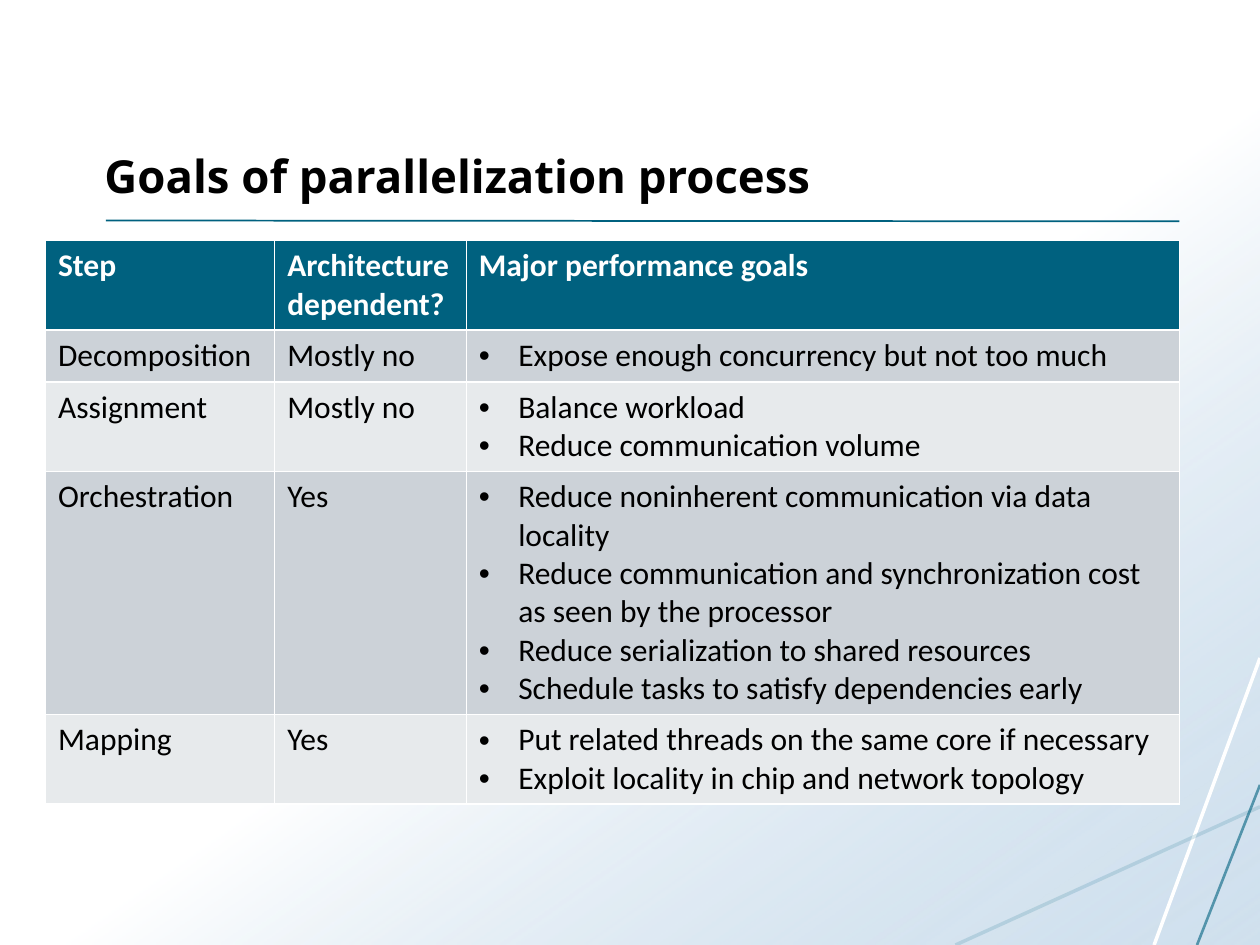
from lxml import etree
from pptx import Presentation
from pptx.dml.color import RGBColor
from pptx.enum import shapes, text
from pptx.oxml.ns import qn
from pptx.util import Pt

TEAL = "00617F"
WHITE = "FFFFFF"
BLACK = "000000"
BANDS = ("CCD2D8", "E7EAEC")
COLUMN_WIDTHS = (131, 109.5, 407.5)
ROW_HEIGHTS = (51, 29.5, 51, 139, 51)
HEADINGS = ("Step", "Architecture dependent?", "Major performance goals")
STEPS = (
    ("Decomposition", "Mostly no", ("Expose enough concurrency but not too much",)),
    ("Assignment", "Mostly no", ("Balance workload", "Reduce communication volume")),
    ("Orchestration", "Yes", (
        "Reduce noninherent communication via data locality",
        "Reduce communication and synchronization cost as seen by the processor",
        "Reduce serialization to shared resources",
        "Schedule tasks to satisfy dependencies early")),
    ("Mapping", "Yes", (
        "Put related threads on the same core if necessary",
        "Exploit locality in chip and network topology")),
)
RAYS = (
    ((720, 376), (659.5, 540), WHITE, 2, 100),
    ((720, 461), (546, 540), "15718F", 2, 16),
    ((720, 448.5), (684, 540), TEAL, 1.5, 60),
)


def color(value):
    """Return the colour for a hex string."""
    return RGBColor.from_string(value)


def set_opacity(element, percent):
    """Set the opacity of the last RGB colour inside an element."""
    rgb = list(element.iter(qn("a:srgbClr")))[-1]
    etree.SubElement(rgb, qn("a:alpha"), val=str(percent * 1000))


def set_font(paragraph, name, size, value, bold=False):
    """Format the font of a paragraph."""
    font = paragraph.font
    font.name, font.size, font.bold = name, Pt(size), bold
    font.color.rgb = color(value)


def add_backdrop(slide, width, height):
    """Add the full-size gradient rectangle."""
    shape = slide.shapes.add_shape(shapes.MSO_SHAPE.RECTANGLE, 0, 0, width, height)
    shape.shadow.inherit = False
    shape.line.fill.background()
    shape.fill.gradient()
    shape.fill.gradient_angle = 360 - 55
    stops = shape.fill.gradient_stops
    for stop, position, value in zip(stops, (0.54, 1), (WHITE, "A9C7E0")):
        stop.position = position
        stop.color.rgb = color(value)
    set_opacity(shape.fill._xPr, 54)


def add_line(slide, start, end, value, width, opacity=100):
    """Add a straight line without shadow."""
    points = [Pt(length) for length in (*start, *end)]
    line = slide.shapes.add_connector(shapes.MSO_CONNECTOR.STRAIGHT, *points)
    line.line.color.rgb = color(value)
    line.line.width = Pt(width)
    if opacity < 100:
        set_opacity(line._element.spPr, opacity)
    etree.SubElement(line._element.spPr, qn("a:effectLst"))


def add_title(slide, wording):
    """Place and format the title above the backdrop."""
    title = slide.shapes.title
    slide.shapes._spTree.append(title._element)
    title.left, title.top, title.width, title.height = Pt(52.5), Pt(24), Pt(621), Pt(95.5)
    frame = title.text_frame
    frame.text = wording
    frame.vertical_anchor = text.MSO_ANCHOR.BOTTOM
    frame.paragraphs[0].alignment = text.PP_ALIGN.LEFT
    set_font(frame.paragraphs[0], "Open Sans", 26, BLACK, True)


def add_bullet(paragraph):
    """Give a paragraph a round bullet with a hanging indent."""
    properties = paragraph._p.get_or_add_pPr()
    indent = Pt(22.5)
    properties.set("marL", str(indent))
    properties.set("indent", str(-indent))
    bullet_font = etree.Element(qn("a:buFont"), typeface="Arial")
    bullet = etree.Element(qn("a:buChar"), char="•")
    properties.insert(0, bullet_font)
    properties.insert(1, bullet)


def fill_cell(cell, content, fill, value, bold=False):
    """Write a string, or a tuple as bullets, into a cell."""
    cell.fill.solid()
    cell.fill.fore_color.rgb = color(fill)
    bulleted = isinstance(content, tuple)
    cell.text = "\n".join(content) if bulleted else content
    for paragraph in cell.text_frame.paragraphs:
        set_font(paragraph, "Calibri", 18, value, bold)
        if bulleted:
            add_bullet(paragraph)


def add_goals_table(slide):
    """Add the table of steps and their goals."""
    frame = slide.shapes.add_table(
        len(ROW_HEIGHTS), len(COLUMN_WIDTHS), Pt(26), Pt(137.5),
        Pt(sum(COLUMN_WIDTHS)), Pt(sum(ROW_HEIGHTS)))
    table = frame.table
    for column, width in zip(table.columns, COLUMN_WIDTHS):
        column.width = Pt(width)
    for row, height in zip(table.rows, ROW_HEIGHTS):
        row.height = Pt(height)
    for cell, heading in zip(table.rows[0].cells, HEADINGS):
        fill_cell(cell, heading, TEAL, WHITE, True)
    for index, step in enumerate(STEPS):
        for cell, content in zip(table.rows[index + 1].cells, step):
            fill_cell(cell, content, BANDS[index % 2], BLACK)


def main():
    """Build and save the slide."""
    presentation = Presentation()
    presentation.slide_width, presentation.slide_height = Pt(720), Pt(540)
    slide = presentation.slides.add_slide(presentation.slide_layouts[5])
    add_backdrop(slide, presentation.slide_width, presentation.slide_height)
    for ray in RAYS:
        add_line(slide, *ray)
    add_line(slide, (60.5, 126), (674, 126.5), TEAL, 1)
    add_title(slide, "Goals of parallelization process")
    add_goals_table(slide)
    presentation.save("out.pptx")


if __name__ == "__main__":
    main()
